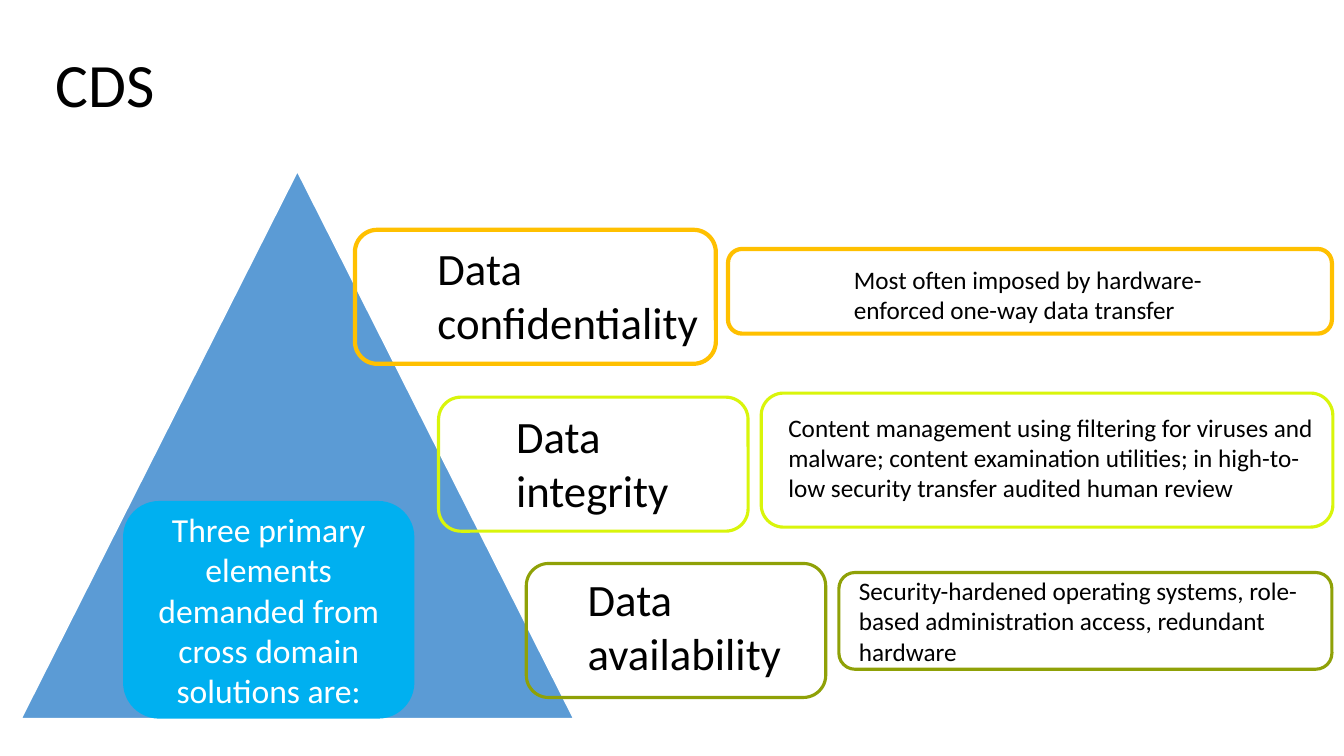
from pptx import Presentation
from pptx import util as u
from pptx.dml.color import RGBColor
from pptx.enum import shapes, text

BLACK = RGBColor(0x00, 0x00, 0x00)
WHITE = RGBColor(0xFF, 0xFF, 0xFF)
PYRAMID_BLUE = RGBColor(0x5B, 0x9B, 0xD5)
SUMMARY_BLUE = RGBColor(0x00, 0xB0, 0xF0)
AMBER = RGBColor(0xFF, 0xC0, 0x00)
LIME = RGBColor(0xD9, 0xF5, 0x0B)
OLIVE = RGBColor(0x8F, 0xA1, 0x07)

ROUNDED = shapes.MSO_SHAPE.ROUNDED_RECTANGLE
TRIANGLE = shapes.MSO_SHAPE.ISOSCELES_TRIANGLE
LEFT, CENTER = text.PP_ALIGN.LEFT, text.PP_ALIGN.CENTER
TOP, MIDDLE = text.MSO_ANCHOR.TOP, text.MSO_ANCHOR.MIDDLE

ELEMENTS = [
    {"color": AMBER, "weight": 3,
     "name_frame": (352, 228, 358, 133), "name_box": (424, 234, 290, 118),
     "name": ["Data confidentiality"], "name_wrap": True,
     "detail_frame": (722, 247, 599, 84), "detail_box": (837, 257, 412, 71),
     "detail": "Most often imposed by hardware-enforced one-way data transfer",
     "indent": 0},
    {"color": LIME, "weight": 2.25,
     "name_frame": (435, 394, 307, 133), "name_box": (502, 401, 173, 118),
     "name": ["Data", "integrity"], "name_wrap": False,
     "detail_frame": (755, 390, 567, 133), "detail_box": (722, 404, 605, 101),
     "detail": "Content management using filtering for viruses and malware; "
               "content examination utilities; in high-to-low security "
               "transfer audited human review",
     "indent": 50},
    {"color": OLIVE, "weight": 2.25,
     "name_frame": (522, 559, 297, 133), "name_box": (573, 562, 215, 118),
     "name": ["Data", "availability"], "name_wrap": False,
     "detail_frame": (832, 568, 489, 96), "detail_box": (792, 566, 521, 101),
     "detail": "Security-hardened operating systems, role-based "
               "administration access, redundant hardware",
     "indent": 50},
]


class Deck:
    """Holds the style and the current slide, and draws each kind of element."""

    SCALE = 9144
    FONT = "Calibri"

    def __init__(self, width, height):
        self.deck = Presentation()
        self.deck.slide_width = self.px(width)
        self.deck.slide_height = self.px(height)
        self.slide = self.deck.slides.add_slide(self.deck.slide_layouts[5])

    def px(self, length):
        return u.Emu(length * self.SCALE)

    def place(self, box):
        return [self.px(length) for length in box]

    def fill_text(self, frame, lines, size, color=BLACK, align=LEFT, anchor=TOP,
                  wrap=True, indent=0, spacing=1.0):
        settings = {"word_wrap": wrap, "vertical_anchor": anchor,
                    "auto_size": text.MSO_AUTO_SIZE.NONE}
        for key, value in settings.items():
            setattr(frame, key, value)
        frame.text = "\n".join(lines)
        for line in frame.paragraphs:
            line.alignment = align
            line.line_spacing = spacing
            if indent:
                properties = line._p.get_or_add_pPr()
                properties.set("marL", str(self.px(indent)))
                properties.set("indent", "0")
            for key, value in {"name": self.FONT, "size": u.Pt(size)}.items():
                setattr(line.runs[0].font, key, value)
            line.runs[0].font.color.rgb = color

    def title(self, box, wording):
        heading = self.slide.shapes.title
        sides = ("left", "top", "width", "height")
        for side, length in zip(sides, self.place(box)):
            setattr(heading, side, length)
        self.fill_text(heading.text_frame, [wording], 44, anchor=MIDDLE,
                       spacing=0.9)

    def shape(self, kind, box, fill=None, line=None, weight=1):
        drawn = self.slide.shapes.add_shape(kind, *self.place(box))
        drawn.shadow.inherit = False
        if fill is None:
            drawn.fill.background()
        else:
            drawn.fill.solid()
            drawn.fill.fore_color.rgb = fill
        if line is None:
            drawn.line.fill.background()
        else:
            drawn.line.color.rgb = line
            drawn.line.width = u.Pt(weight)
        return drawn

    def label(self, box, lines, size, **layout):
        holder = self.slide.shapes.add_textbox(*self.place(box))
        self.fill_text(holder.text_frame, lines, size, **layout)

    def save(self):
        self.deck.save("out.pptx")


def main():
    cds = Deck(1333, 750)
    cds.title((45, 14, 1268, 145), "CDS")
    cds.shape(TRIANGLE, (21, 170, 548, 543), PYRAMID_BLUE, WHITE)
    summary = cds.shape(ROUNDED, (122, 497, 289, 216), SUMMARY_BLUE)
    cds.fill_text(
        summary.text_frame,
        ["Three primary elements demanded from cross domain solutions are:"],
        24, WHITE, CENTER, MIDDLE)
    for element in ELEMENTS:
        for part in ("name_frame", "detail_frame"):
            cds.shape(ROUNDED, element[part], line=element["color"],
                      weight=element["weight"])
        cds.label(element["name_box"], element["name"], 32,
                  wrap=element["name_wrap"])
        cds.label(element["detail_box"], [element["detail"]], 18,
                  indent=element["indent"])
    cds.save()


if __name__ == "__main__":
    main()
